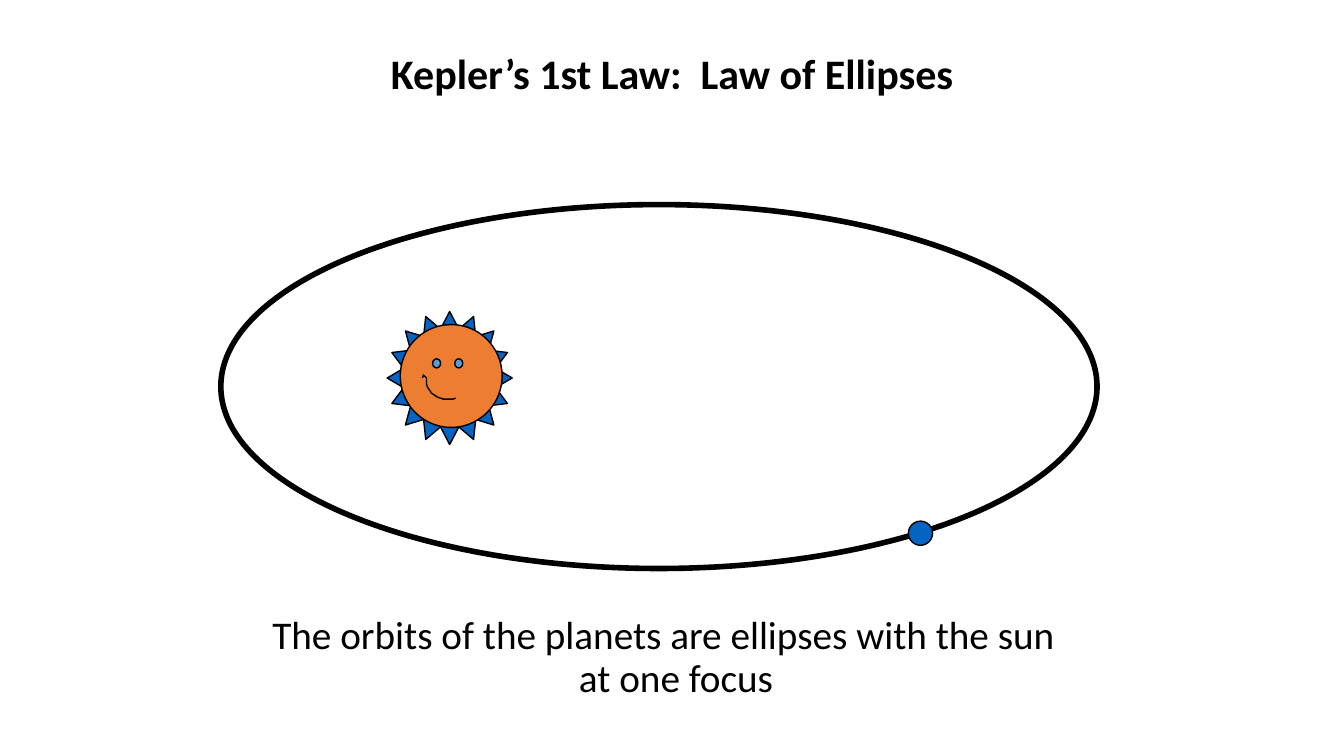
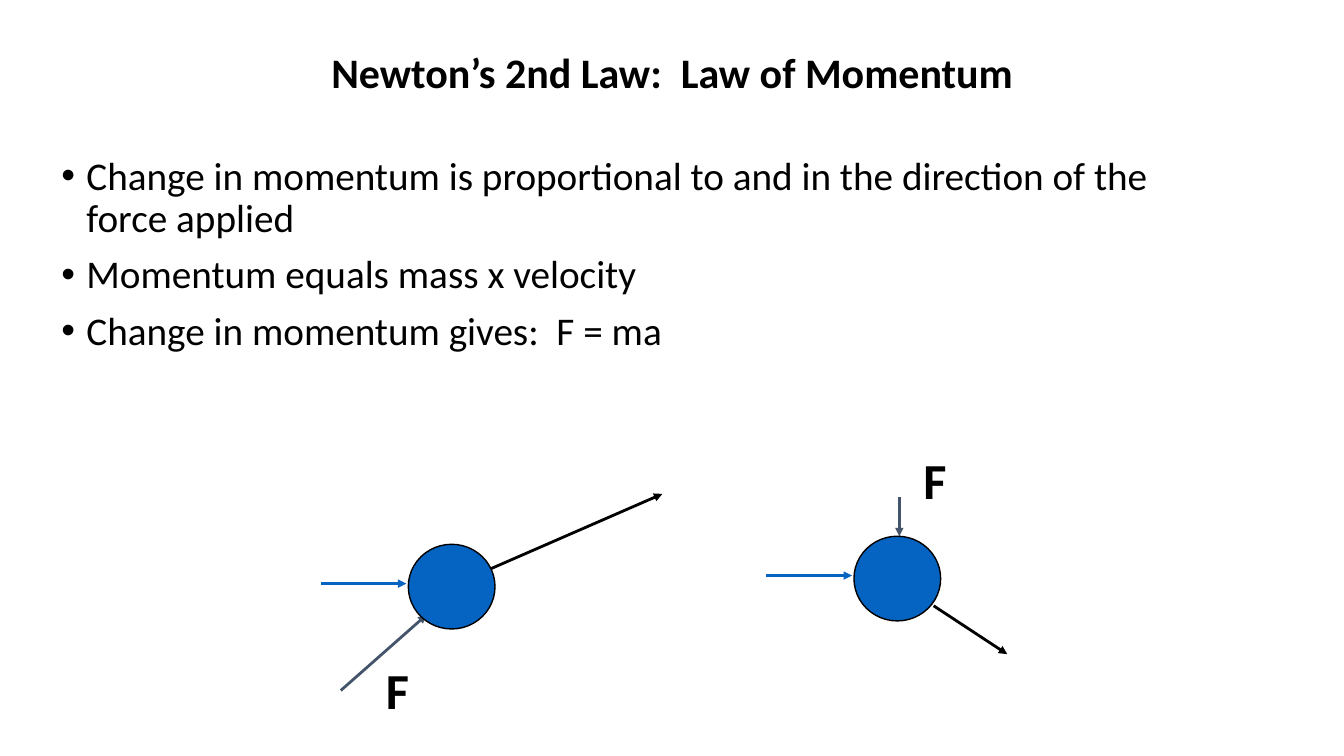
from lxml import etree
from pptx import Presentation
from pptx.dml.color import RGBColor
from pptx.enum.shapes import MSO_CONNECTOR, MSO_SHAPE
from pptx.enum.text import MSO_ANCHOR, MSO_AUTO_SIZE, PP_ALIGN
from pptx.oxml.ns import qn
from pptx.util import Emu, Pt

PX = 9144
FONT = "Calibri"
BLACK = RGBColor(0x00, 0x00, 0x00)
WHITE = RGBColor(0xFF, 0xFF, 0xFF)
BLUE = RGBColor(0x05, 0x63, 0xC1)
LIGHT_BLUE = RGBColor(0x5B, 0x9B, 0xD5)
ORANGE = RGBColor(0xED, 0x7D, 0x31)
SLATE = RGBColor(0x44, 0x54, 0x6A)
ELLIPSE = MSO_SHAPE.OVAL
STAR = MSO_SHAPE.STAR_16_POINT
STRAIGHT = MSO_CONNECTOR.STRAIGHT
LEFT, CENTER = PP_ALIGN.LEFT, PP_ALIGN.CENTER
MIDDLE, TOP = MSO_ANCHOR.MIDDLE, MSO_ANCHOR.TOP
GROW = MSO_AUTO_SIZE.SHAPE_TO_FIT_TEXT

SMILE = [(0, 3), (1, 0), (4, 3), (4, 6), (4, 9), (5, 12), (7, 15), (9, 18),
         (12, 20), (15, 22), (18, 23), (21, 24), (24, 24), (27, 24), (30, 24), (33, 23)]
LAW_POINTS = [
    "Change in momentum is proportional to and in the direction of the force applied",
    "Momentum equals mass x velocity",
    "Change in momentum gives:  F = ma",
]


def px(*lengths):
    """Turn px lengths into EMU."""
    return [Emu(length * PX) for length in lengths]


def add_text(slide, box, lines, size, bold=False, align=LEFT, anchor=TOP, wrap=True):
    """Add a text box with one paragraph per line and return its frame."""
    frame = slide.shapes.add_textbox(*px(*box)).text_frame
    frame.word_wrap = wrap
    frame.vertical_anchor = anchor
    frame.text = "\n".join(lines)
    for paragraph in frame.paragraphs:
        paragraph.alignment = align
        for run in paragraph.runs:
            run.font.name = FONT
            run.font.size = Pt(size)
            run.font.bold = bold
            run.font.color.rgb = BLACK
    return frame


def add_title(slide, box, title):
    """Add the bold centred slide title."""
    frame = add_text(slide, box, [title], 30, True, CENTER, MIDDLE)
    frame.paragraphs[0].line_spacing = 0.9


def add_body(slide, box, lines, align=LEFT, bullet=None):
    """Add body text with a hanging indent and an optional bullet."""
    frame = add_text(slide, box, lines, 28, align=align)
    for paragraph in frame.paragraphs:
        paragraph.line_spacing = 0.9
        paragraph.space_before = Pt(10)
        properties = paragraph._p.get_or_add_pPr()
        properties.set("marL", str(25 * PX))
        properties.set("indent", str(-25 * PX))
        if bullet:
            etree.SubElement(properties, qn("a:buFont")).set("typeface", "Arial")
            etree.SubElement(properties, qn("a:buChar")).set("char", bullet)


def add_figure(slide, kind, box, fill, weight=1):
    """Add a filled preset shape with a black outline."""
    figure = slide.shapes.add_shape(kind, *px(*box))
    figure.shadow.inherit = False
    figure.fill.solid()
    figure.fill.fore_color.rgb = fill
    figure.line.color.rgb = BLACK
    figure.line.width = Pt(weight)
    return figure


def add_arrow(slide, start, end, color):
    """Add a straight arrow from start to end."""
    arrow = slide.shapes.add_connector(STRAIGHT, *px(*start, *end))
    arrow.line.color.rgb = color
    arrow.line.width = Pt(2)
    etree.SubElement(arrow.line._get_or_add_ln(), qn("a:tailEnd")).set("type", "triangle")
    etree.SubElement(arrow._element.spPr, qn("a:effectLst"))


def add_sun(slide, left, top):
    """Draw the smiling sun from its top left corner."""
    rays = add_figure(slide, STAR, (left, top, 124, 132), BLUE)
    rays.adjustments[0] = 0.375
    add_figure(slide, ELLIPSE, (left + 13, top + 13, 101, 102), ORANGE)
    for eye_offset in (45, 67):
        add_figure(slide, ELLIPSE, (left + eye_offset, top + 47, 8, 9), LIGHT_BLUE)
    points = [(left + 35 + x, top + 63 + y) for x, y in SMILE]
    outline = slide.shapes.build_freeform(*points[0], scale=PX)
    outline.add_line_segments(points[1:], close=False)
    smile = outline.convert_to_shape()
    smile.shadow.inherit = False
    smile.fill.background()
    smile.line.color.rgb = BLACK
    smile.line.width = Pt(1)


def add_orbit(slide, left, top, width, height):
    """Draw the elliptical orbit with the sun at a focus and a planet on it."""
    add_figure(slide, ELLIPSE, (left, top, width, height), WHITE, 4)
    add_sun(slide, left + 165, top + 106)
    add_figure(slide, ELLIPSE, (left + 682, top + 314, 24, 24), BLUE)


def add_collision(slide, left, top, force, result, label):
    """Draw a moving ball, the force on it and its resulting path."""
    velocity = ((-87, 39), (-2, 39))
    for ends, color in ((velocity, BLUE), (force, SLATE), (result, BLACK)):
        start, end = [(left + x, top + y) for x, y in ends]
        add_arrow(slide, start, end, color)
    add_figure(slide, ELLIPSE, (left, top, 86, 84), BLUE)
    label_x, label_y = label
    label_box = (left + label_x, top + label_y, 43, 70)
    add_text(slide, label_box, ["F"], 36, bold=True, wrap=False).auto_size = GROW


def build_kepler(slide):
    """Build the slide on the law of ellipses."""
    add_title(slide, (242, 25, 850, 100), "Kepler’s 1st Law:  Law of Ellipses")
    add_body(slide, (258, 606, 800, 119),
             ["The orbits of the planets are ellipses with the sun at one focus"], CENTER)
    add_orbit(slide, 219, 203, 869, 361)


def build_newton(slide):
    """Build the slide on the law of momentum."""
    add_title(slide, (242, 33, 850, 83), "Newton’s 2nd Law:  Law of Momentum")
    add_body(slide, (51, 150, 1146, 517), LAW_POINTS, bullet="•")
    add_collision(slide, 405, 540, force=((-67, 145), (18, 70)),
                  result=((80, 25), (252, -50)), label=(-32, 109))
    add_collision(slide, 847, 532, force=((45, -39), (45, 0)),
                  result=((79, 69), (152, 117)), label=(59, -91))


def main():
    """Build and save the presentation."""
    deck = Presentation()
    deck.slide_width, deck.slide_height = px(1333, 750)
    blank = deck.slide_layouts[6]
    for build in (build_kepler, build_newton):
        build(deck.slides.add_slide(blank))
    deck.save("out.pptx")


if __name__ == "__main__":
    main()
